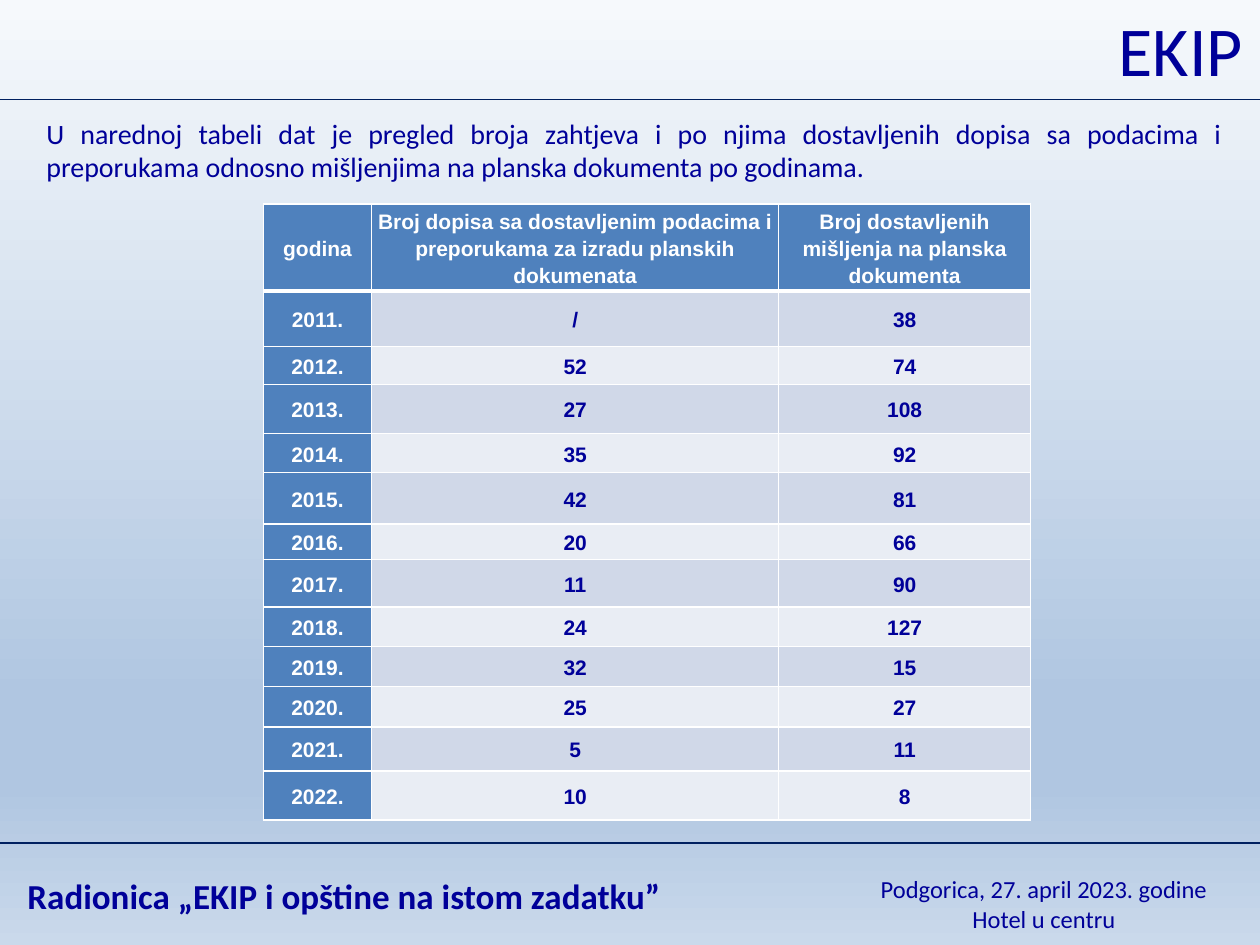
"""Build the EKIP slide with the yearly table of requests and opinions."""
from lxml.etree import SubElement
from pptx import Presentation
from pptx.dml.color import RGBColor as RGB
from pptx.enum.text import MSO_ANCHOR as ANCHOR, MSO_AUTO_SIZE as FIT, PP_ALIGN as ALIGN
from pptx.oxml import parse_xml
from pptx.oxml.ns import nsdecls, qn
from pptx.util import Inches, Pt

COLORS = {"navy": "000099", "rule": "002060", "white": "FFFFFF", "head": "4F81BD",
          "odd": "D0D8E8", "even": "E9EDF4",
          "sky": "F6F9FC", "mist": "B0C6E1", "ground": "CAD9EB"}

prs = Presentation()
prs.slide_width, prs.slide_height = Inches(10), Inches(7.5)
COL, ROW = prs.slide_width / 10, prs.slide_height / 7.5
s = prs.slides.add_slide(prs.slide_layouts[6])


def place(x, y, w, h):
    return int(x * COL), int(y * ROW), int(w * COL), int(h * ROW)


def write(p, text, color, **fmt):
    r = p.add_run()
    r.text = text
    r.font.color.rgb = RGB.from_string(COLORS[color])
    for name, value in fmt.items():
        setattr(r.font, name, value)


fill = s.background.fill
fill.gradient()
fill.gradient_angle = 270
stops = next(s.element.iter(qn("a:gsLst")))
for old in list(stops):
    stops.remove(old)
for pos, color in [(0, "sky"), (74, "mist"), (83, "mist"), (100, "ground")]:
    gs = SubElement(stops, qn("a:gs"), pos=str(pos * 1000))
    SubElement(gs, qn("a:srgbClr"), val=COLORS[color])

for y in (0.79, 6.69):
    x1, y1, w, h = place(0, y, 10, 0)
    line = s.shapes.add_connector(1, x1, y1, x1 + w, y1)
    line.line.color.rgb = RGB.from_string(COLORS["rule"])
    line.line.width = Pt(0.75)
    SubElement(line.element.spPr, qn("a:effectLst"))

boxes = [
    ((8.78, 0, 1.2, 0.77), ["EKIP"], 40, False, ALIGN.LEFT, ANCHOR.TOP, False),
    ((0.12, 6.89, 6.14, 0.44), ["Radionica „EKIP i opštine na istom zadatku”"],
     20, True, ALIGN.LEFT, ANCHOR.TOP, True),
    ((6.89, 6.89, 2.79, 0.57), ["Podgorica, 27. april 2023. godine", "Hotel u centru"],
     14, False, ALIGN.CENTER, ANCHOR.TOP, True),
    ((0.27, 0.87, 9.53, 0.64),
     ["U narednoj tabeli dat je pregled broja zahtjeva i po njima dostavljenih dopisa sa podacima i "
      "preporukama odnosno mišljenjima na planska dokumenta po godinama."],
     16, False, ALIGN.JUSTIFY, ANCHOR.MIDDLE, True),
]
for box, lines, size, bold, align, anchor, wrap in boxes:
    tf = s.shapes.add_textbox(*place(*box)).text_frame
    frame = {"word_wrap": wrap, "auto_size": FIT.SHAPE_TO_FIT_TEXT, "vertical_anchor": anchor}
    for name, value in frame.items():
        setattr(tf, name, value)
    for i, text in enumerate(lines):
        p = tf.add_paragraph() if i else tf.paragraphs[0]
        p.alignment = align
        write(p, text, "navy", size=Pt(size), bold=bold, name="Calibri")

header = ["godina",
          "Broj dopisa sa dostavljenim podacima i preporukama za izradu planskih dokumenata",
          "Broj dostavljenih mišljenja na planska dokumenta"]
letters = ["/", 52, 27, 35, 42, 20, 11, 24, 32, 25, 5, 10]
opinions = [38, 74, 108, 92, 81, 66, 90, 127, 15, 27, 11, 8]
rows = [header] + [[f"{year}.", str(a), str(b)]
                   for year, a, b in zip(range(2011, 2023), letters, opinions)]
widths = [0.86, 3.23, 2]
heights = [0.63, 0.44, 0.3, 0.39, 0.31, 0.41, 0.28, 0.38, 0.31, 0.32, 0.32, 0.35, 0.39]
cell_format = {"vertical_anchor": ANCHOR.MIDDLE, "margin_left": Inches(0.03),
               "margin_right": Inches(0.03), "margin_top": 0, "margin_bottom": 0}

table = s.shapes.add_table(len(rows), len(widths), *place(2.09, 1.62, 6.09, 4.82)).table
for column, width in zip(table.columns, widths):
    column.width = int(width * COL)
for i, (values, height) in enumerate(zip(rows, heights)):
    table.rows[i].height = int(height * ROW)
    for j, text in enumerate(values):
        cell = table.cell(i, j)
        for name, value in cell_format.items():
            setattr(cell, name, value)
        heading = i == 0 or j == 0
        band = "head" if heading else "odd" if i % 2 else "even"
        cell.fill.solid()
        cell.fill.fore_color.rgb = RGB.from_string(COLORS[band])
        p = cell.text_frame.paragraphs[0]
        p.alignment, p.line_spacing = ALIGN.CENTER, 1.15
        if i == 0:
            p.space_after = Pt(10)
        write(p, text, "white" if heading else "navy", size=Pt(12), bold=True, name="Arial")
        for k, side in enumerate("LRTB"):
            thick = (i, side) in [(0, "B"), (1, "T")]
            cell._tc.get_or_add_tcPr().insert(k, parse_xml(
                f'<a:ln{side} {nsdecls("a")} w="{Pt(3 if thick else 1)}"><a:solidFill>'
                f'<a:srgbClr val="{COLORS["white"]}"/></a:solidFill></a:ln{side}>'))

prs.save("out.pptx")
